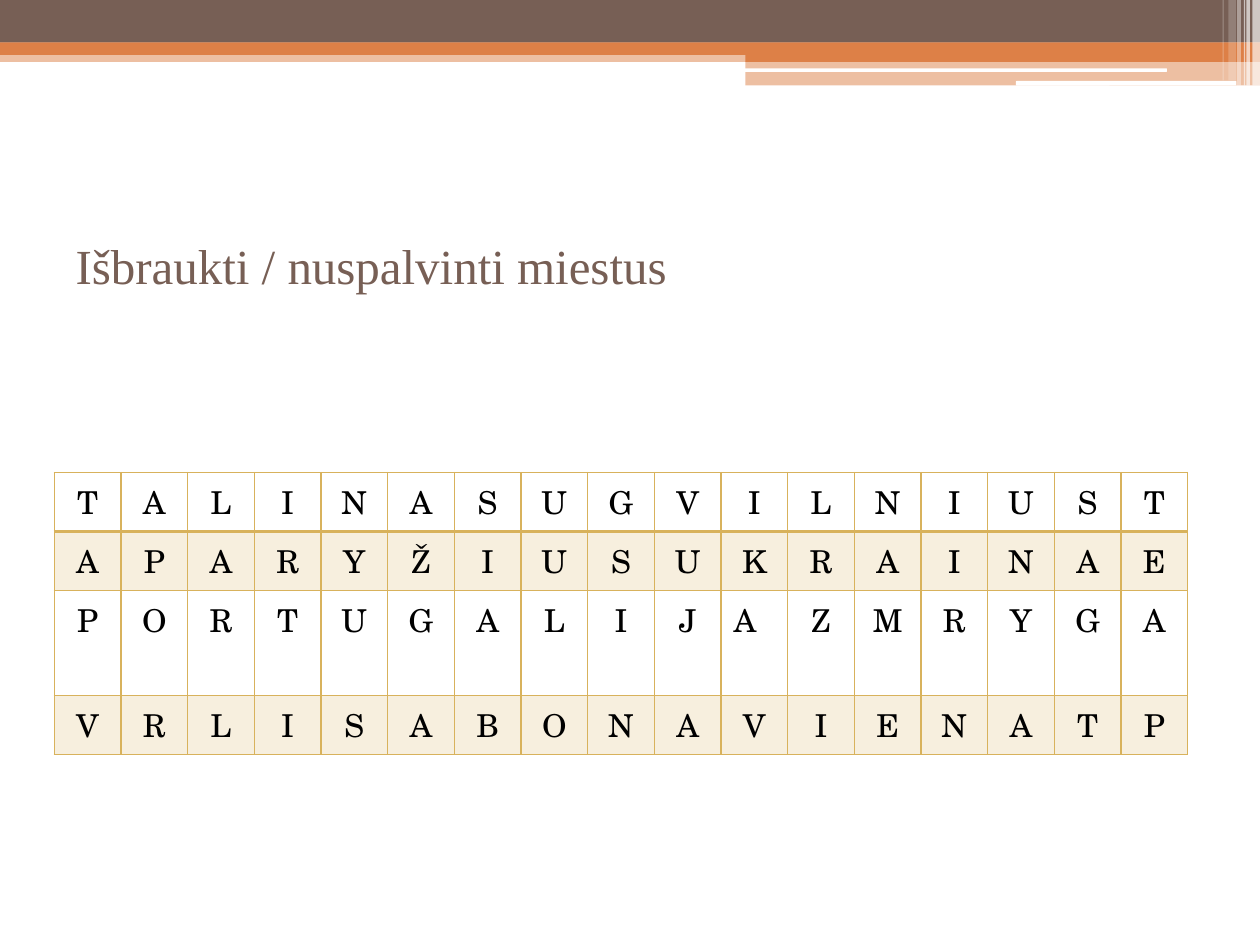
from lxml.etree import SubElement
from pptx import Presentation
from pptx.dml.color import RGBColor
from pptx.enum.shapes import MSO_SHAPE
from pptx.enum.text import MSO_ANCHOR, PP_ALIGN
from pptx.oxml.ns import qn
from pptx.util import Pt

COLORS = {
    "brown": "775F55",
    "orange": "DD8047",
    "gold": "D8B25C",
    "white": "FFFFFF",
    "black": "000000",
}
RECT, ROUND = MSO_SHAPE.RECTANGLE, MSO_SHAPE.ROUNDED_RECTANGLE

HEADER_BANDS = [
    (RECT, 0, 28.8, 720, 6.6, "orange", 50),
    (RECT, 0, 0, 720, 24.4, "brown", 100),
    (RECT, 0, 24.2, 720, 7.2, "orange", 100),
    (RECT, 426, 28.2, 294, 7.2, "orange", 100),
    (RECT, 426, 35.2, 294, 13.6, "orange", 50),
    (ROUND, 425.6, 39.1, 241.2, 2, "white", 100),
    (ROUND, 580.5, 46.3, 126, 2.6, "white", 100),
]
STRIPES = [
    (715.7, 4.3, 48.9, 65),
    (712.2, 2.1, 48.9, 65),
    (710.8, 0.7, 48.9, 60),
    (707, 2.1, 48.9, 40),
    (702, 4.3, 46, 20),
    (698.6, 0.7, 46, 30),
]

TITLE = "Išbraukti / nuspalvinti miestus"
TITLE_FONT = {"name": "Times New Roman", "size": Pt(28), "bold": False}
LETTER_FONT = {"name": "TeX Gyre Schola", "size": Pt(18), "bold": False}
LETTER_ROWS = [
    "TALINASUGVILNIUST",
    "APARYŽIUSUKRAINAE",
    "PORTUGALIJAZMRYGA",
    "VRLISABONAVIENATP",
]
ROW_HEIGHTS = [33.7, 33.7, 60, 33.7]
COLUMN_WIDTH = 38.12
LEFT_ALIGNED = (2, 10)


def rgb(name):
    return RGBColor.from_string(COLORS[name])


def format_font(font, values, color):
    for key, value in values.items():
        setattr(font, key, value)
    font.color.rgb = rgb(color)


def fill_solid(fill, element, color, opacity=100):
    fill.solid()
    fill.fore_color.rgb = rgb(color)
    if opacity < 100:
        clr = next(element.iter(qn("a:srgbClr")))
        SubElement(clr, qn("a:alpha"), val=str(opacity * 1000))


def add_band(s, kind, left, top, width, height, color, opacity):
    sp = s.shapes.add_shape(kind, Pt(left), Pt(top), Pt(width), Pt(height))
    sp.shadow.inherit = False
    sp.line.fill.background()
    fill_solid(sp.fill, sp._element, color, opacity)


def add_title(s):
    title = s.shapes.title
    box = {"left": 36, "top": 90, "width": 648, "height": 123}
    for key, value in box.items():
        setattr(title, key, Pt(value))
    tf = title.text_frame
    tf.vertical_anchor = MSO_ANCHOR.MIDDLE
    p = tf.paragraphs[0]
    p.alignment = PP_ALIGN.LEFT
    r = p.add_run()
    r.text = TITLE
    format_font(r.font, TITLE_FONT, "brown")


def set_borders(tcPr, widths):
    for side, width in widths.items():
        ln = SubElement(tcPr, qn(f"a:ln{side}"), w=str(Pt(width)))
        fill = SubElement(ln, qn("a:solidFill"))
        SubElement(fill, qn("a:srgbClr"), val=COLORS["gold"])


def format_cell(cell, row, column, letter):
    p = cell.text_frame.paragraphs[0]
    left = (row, column) == LEFT_ALIGNED
    p.alignment = PP_ALIGN.LEFT if left else PP_ALIGN.CENTER
    r = p.add_run()
    r.text = letter
    format_font(r.font, LETTER_FONT, "black")

    tcPr = cell._tc.get_or_add_tcPr()
    top, bottom = (2 if row == 1 else 1), (2 if row == 0 else 1)
    set_borders(tcPr, {"L": 1, "R": 1, "T": top, "B": bottom})
    if row % 2:
        fill = tcPr.makeelement(qn("a:solidFill"))
        tcPr.append(fill)
        clr = SubElement(fill, qn("a:srgbClr"), val=COLORS["gold"])
        SubElement(clr, qn("a:alpha"), val="20000")
    else:
        cell.fill.background()


def add_letter_grid(s):
    rows, columns = len(LETTER_ROWS), len(LETTER_ROWS[0])
    table = s.shapes.add_table(
        rows, columns, Pt(31), Pt(270),
        Pt(COLUMN_WIDTH * columns), Pt(sum(ROW_HEIGHTS)),
    ).table
    table.first_row = table.horz_banding = False
    for column in table.columns:
        column.width = Pt(COLUMN_WIDTH)
    for i, letters in enumerate(LETTER_ROWS):
        table.rows[i].height = Pt(ROW_HEIGHTS[i])
        for j, letter in enumerate(letters):
            format_cell(table.cell(i, j), i, j, letter)


def main():
    prs = Presentation()
    prs.slide_width, prs.slide_height = Pt(720), Pt(540)
    s = prs.slides.add_slide(prs.slide_layouts[5])
    for band in HEADER_BANDS:
        add_band(s, *band)
    for left, width, height, opacity in STRIPES:
        add_band(s, RECT, left, 0, width, height, "white", opacity)
    add_title(s)
    add_letter_grid(s)
    prs.save("out.pptx")


if __name__ == "__main__":
    main()
